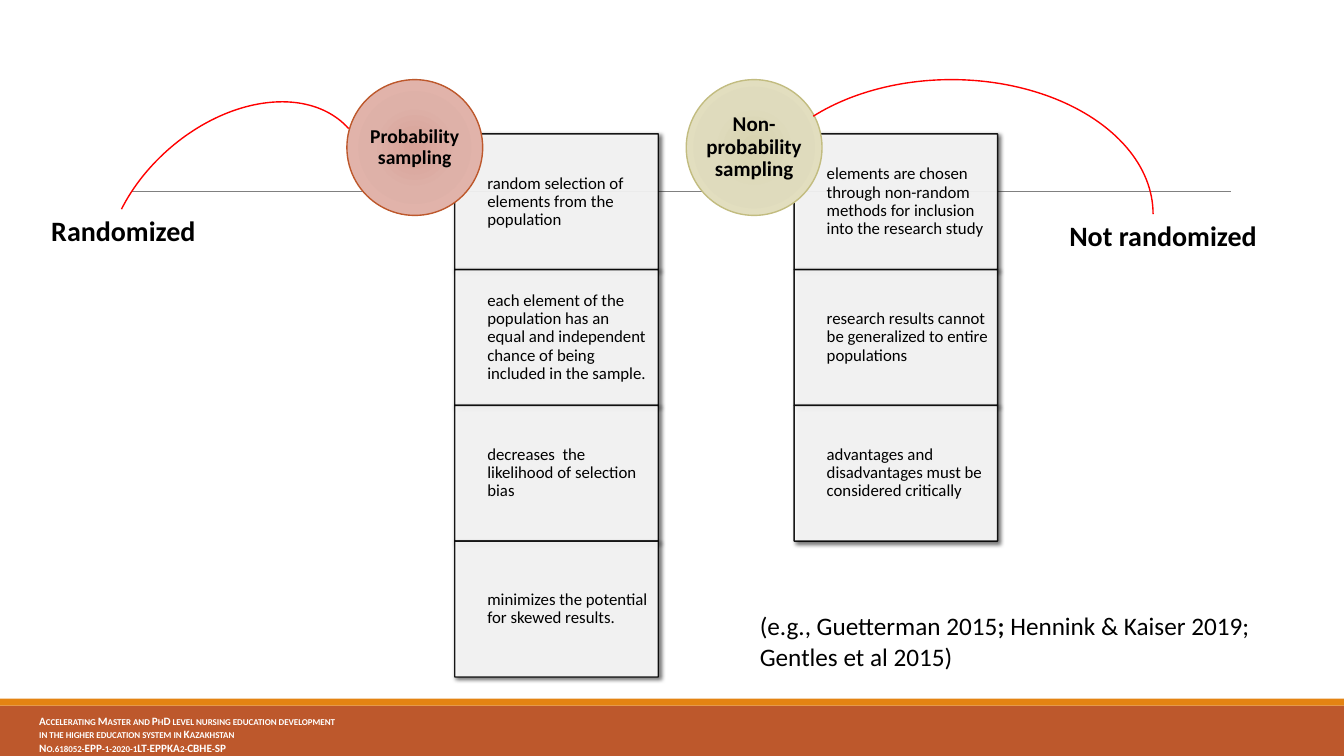
from lxml import etree
from pptx import Presentation
from pptx.dml.color import RGBColor
from pptx.enum.shapes import MSO_CONNECTOR, MSO_SHAPE
from pptx.enum.text import MSO_ANCHOR, MSO_AUTO_SIZE, PP_ALIGN
from pptx.oxml import parse_xml
from pptx.oxml.ns import qn
from pptx.util import Pt

RECT, OVAL, ARC = MSO_SHAPE.RECTANGLE, MSO_SHAPE.OVAL, MSO_SHAPE.ARC
STRAIGHT = MSO_CONNECTOR.STRAIGHT
LEFT, CENTER = PP_ALIGN.LEFT, PP_ALIGN.CENTER
MIDDLE = MSO_ANCHOR.MIDDLE
GROW = MSO_AUTO_SIZE.SHAPE_TO_FIT_TEXT

NS = 'xmlns:a="http://schemas.openxmlformats.org/drawingml/2006/main"'
FONT = "Calibri"
COLORS = {
    "black": "000000",
    "white": "FFFFFF",
    "rust": "BD582C",
    "orange": "E48312",
    "grey": "808080",
    "red": "FF0000",
    "khaki": "C2BC80",
}
ROSE_FADE = ((0, "D7A197"), (45, "DEB1A8"), (100, "E6B7AE"))
SAND_FADE = ((0, "D7D3AF"), (45, "DFDBBD"), (100, "E5E1C1"))

WIDE, HIGH = 960, 540
TILE_W, TILE_H, TILE_TOP = 145.4, 97, 95.6
BALL_TOP, BALL_SHIFT = 56.9, 77

PROB = (
    "random selection of elements from the population",
    "each element of the population has an equal and independent "
    "chance of being included in the sample.",
    "decreases  the  likelihood of selection  bias",
    "minimizes the potential for skewed results.",
)
NONPROB = (
    "elements are chosen through non-random methods for inclusion "
    "into the research study",
    "research results cannot be generalized to entire populations",
    "advantages and disadvantages must be considered critically",
)
FOOTER = (
    "Accelerating Master and PhD level nursing education development",
    "in the higher education system in Kazakhstan",
    "No.618052-EPP-1-2020-1LT-EPPKA2-CBHE-SP",
)
CITES = (
    ("(e.g., Guetterman 2015", False),
    ("; ", True),
    ("Hennink & Kaiser 2019;", False),
    ("\n", False),
    ("Gentles et al 2015)", False),
)


def rgb(name):
    return RGBColor.from_string(COLORS[name])


def write(frame, *paras, size, color="black", bold=False, caps=False,
          align=LEFT, spacing=None):
    """Fill a frame; a paragraph is a string or a run of (text, bold) pairs."""
    for i, para in enumerate(paras):
        line = frame.add_paragraph() if i else frame.paragraphs[0]
        line.alignment = align
        line.line_spacing = spacing
        parts = ((para, bold),) if isinstance(para, str) else para
        for text, heavy in parts:
            if text == "\n":
                line.add_line_break()
                continue
            run = line.add_run()
            run.text = text
            font = run.font
            font.name, font.size, font.bold = FONT, Pt(size), heavy
            font.color.rgb = rgb(color)
            if caps:
                run._r.get_or_add_rPr().set("cap", "small")


def pad(frame, left, rest):
    frame.word_wrap = True
    frame.vertical_anchor = MIDDLE
    frame.margin_left = Pt(left)
    frame.margin_top = frame.margin_right = frame.margin_bottom = Pt(rest)


def add_form(slide, kind, box, fill=None, line=None):
    form = slide.shapes.add_shape(kind, *map(Pt, box))
    form.shadow.inherit = False
    if fill:
        form.fill.solid()
        form.fill.fore_color.rgb = rgb(fill)
    else:
        form.fill.background()
    if line:
        form.line.color.rgb = rgb(line)
        form.line.width = Pt(1)
    else:
        form.line.fill.background()
    return form


def add_label(slide, box, *paras, wrap=False, **style):
    frame = slide.shapes.add_textbox(*map(Pt, box)).text_frame
    frame.word_wrap = wrap
    if not wrap:
        frame.auto_size = GROW
    write(frame, *paras, **style)


def add_tile(slide, left, top, text):
    """Draw a slightly sheer card with a soft shadow."""
    tile = add_form(slide, RECT, (left, top, TILE_W, TILE_H), "white", "black")
    props = tile._element.spPr
    for color in props.iter(qn("a:srgbClr")):
        etree.SubElement(color, qn("a:alpha"), val="90000")
    props.find(qn("a:effectLst")).append(parse_xml(
        f'<a:outerShdw {NS} blurRad="{Pt(3)}" dist="{Pt(2)}" dir="2700000" '
        f'algn="tl" rotWithShape="0"><a:srgbClr val="{COLORS["black"]}">'
        '<a:alpha val="60000"/></a:srgbClr></a:outerShdw>'))
    pad(tile.text_frame, 23.3, 6.4)
    write(tile.text_frame, text, size=12, spacing=0.9)


def add_ball(slide, left, text, fade, line, size):
    ball = add_form(slide, OVAL, (left, BALL_TOP, TILE_H, TILE_H), line=line)
    stops = "".join(
        f'<a:gs pos="{pos * 1000}"><a:srgbClr val="{color}"/></a:gs>'
        for pos, color in fade)
    props = ball._element.spPr
    props.replace(props.find(qn("a:noFill")), parse_xml(
        f'<a:gradFill {NS} rotWithShape="1"><a:gsLst>{stops}</a:gsLst>'
        '<a:path path="circle"><a:fillToRect l="100000" t="100000" '
        'r="100000" b="100000"/></a:path></a:gradFill>'))
    pad(ball.text_frame, 0, 0)
    write(ball.text_frame, text, size=size, bold=True, align=CENTER,
          spacing=0.9)


def add_stack(slide, left, texts, title, fade, line, size):
    """Draw a column of cards with a round heading on its corner."""
    for i, text in enumerate(texts):
        add_tile(slide, left, TILE_TOP + i * TILE_H, text)
    add_ball(slide, left - BALL_SHIFT, title, fade, line, size)


def add_arc(slide, box, start, turn=0):
    arc = add_form(slide, ARC, box, line="red")
    arc.adjustments[0] = start
    arc.adjustments[1] = 0
    arc.rotation = turn


def add_rule(slide, left, right, top):
    rule = slide.shapes.add_connector(
        STRAIGHT, Pt(left), Pt(top), Pt(right), Pt(top))
    rule.line.color.rgb = rgb("grey")
    rule.line.width = Pt(0.5)
    etree.SubElement(rule._element.spPr, qn("a:effectLst"))


def main():
    deck = Presentation()
    deck.slide_width, deck.slide_height = Pt(WIDE), Pt(HIGH)
    slide = deck.slides.add_slide(deck.slide_layouts[6])

    add_form(slide, RECT, (0, 504, WIDE, 36), "rust")
    add_form(slide, RECT, (0, 499, WIDE, 5), "orange")
    add_rule(slide, 94.3, 879.1, 136.8)
    add_label(slide, (20.9, 506.5, 330.5, 33.5), *FOOTER, wrap=True,
              size=8, color="white", bold=True, caps=True)

    add_stack(slide, 324.8, PROB, "Probability sampling",
              ROSE_FADE, "rust", 14)
    add_stack(slide, 567.2, NONPROB, "Non-probability sampling",
              SAND_FADE, "khaki", 15)

    add_arc(slide, (535.7, 56.9, 288, 192), 129.17)
    add_label(slide, (756.7, 152.6, 149.8, 31.5), "Not randomized",
              size=20, bold=True)
    add_arc(slide, (61.9, 88.6, 214.6, 149.8), 138.95, 318.1)
    add_label(slide, (29.5, 149, 118.8, 31.5), "Randomized",
              size=20, bold=True)
    add_label(slide, (535.7, 432.7, 372.2, 50.9), CITES, size=18)

    deck.save("out.pptx")


if __name__ == "__main__":
    main()
